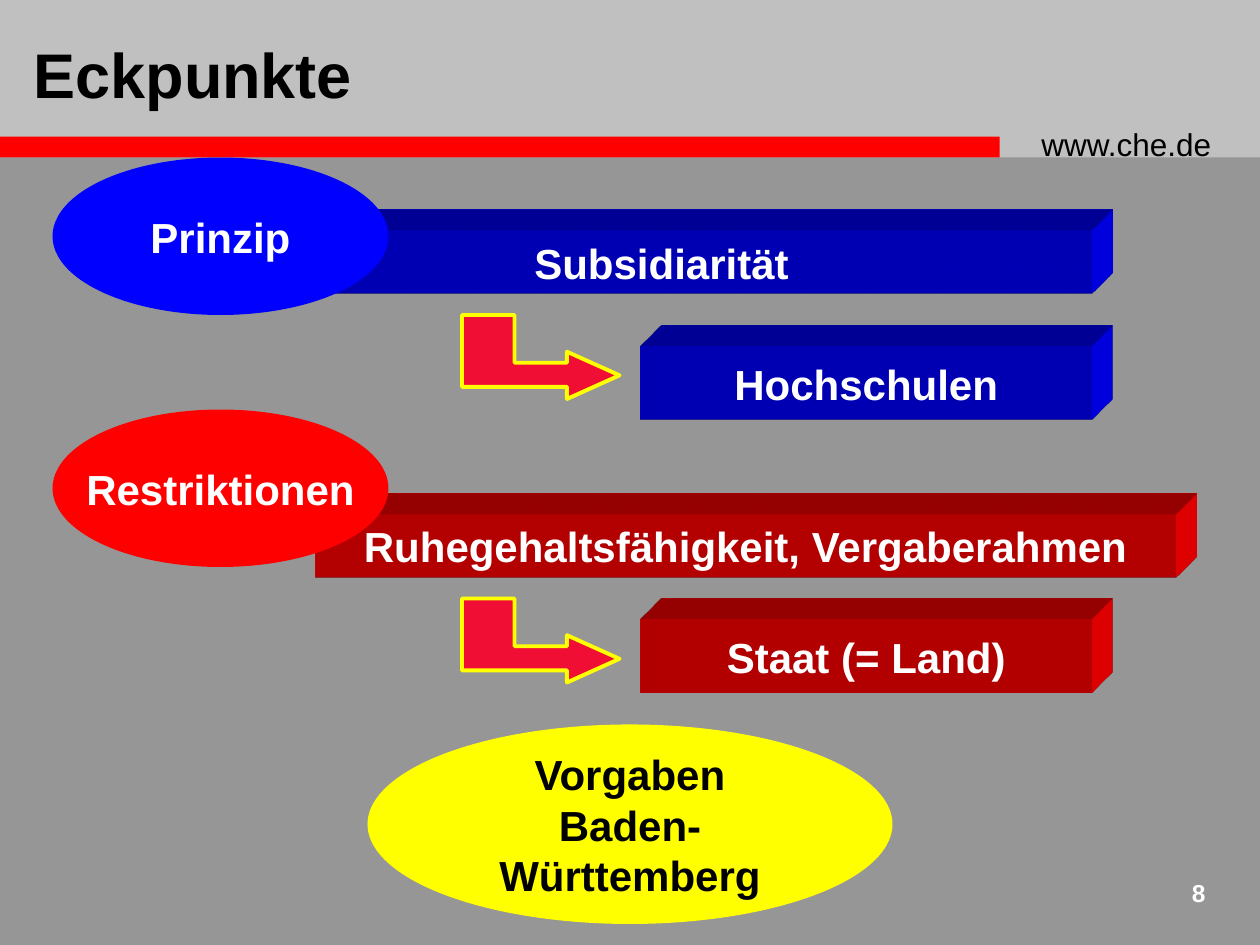
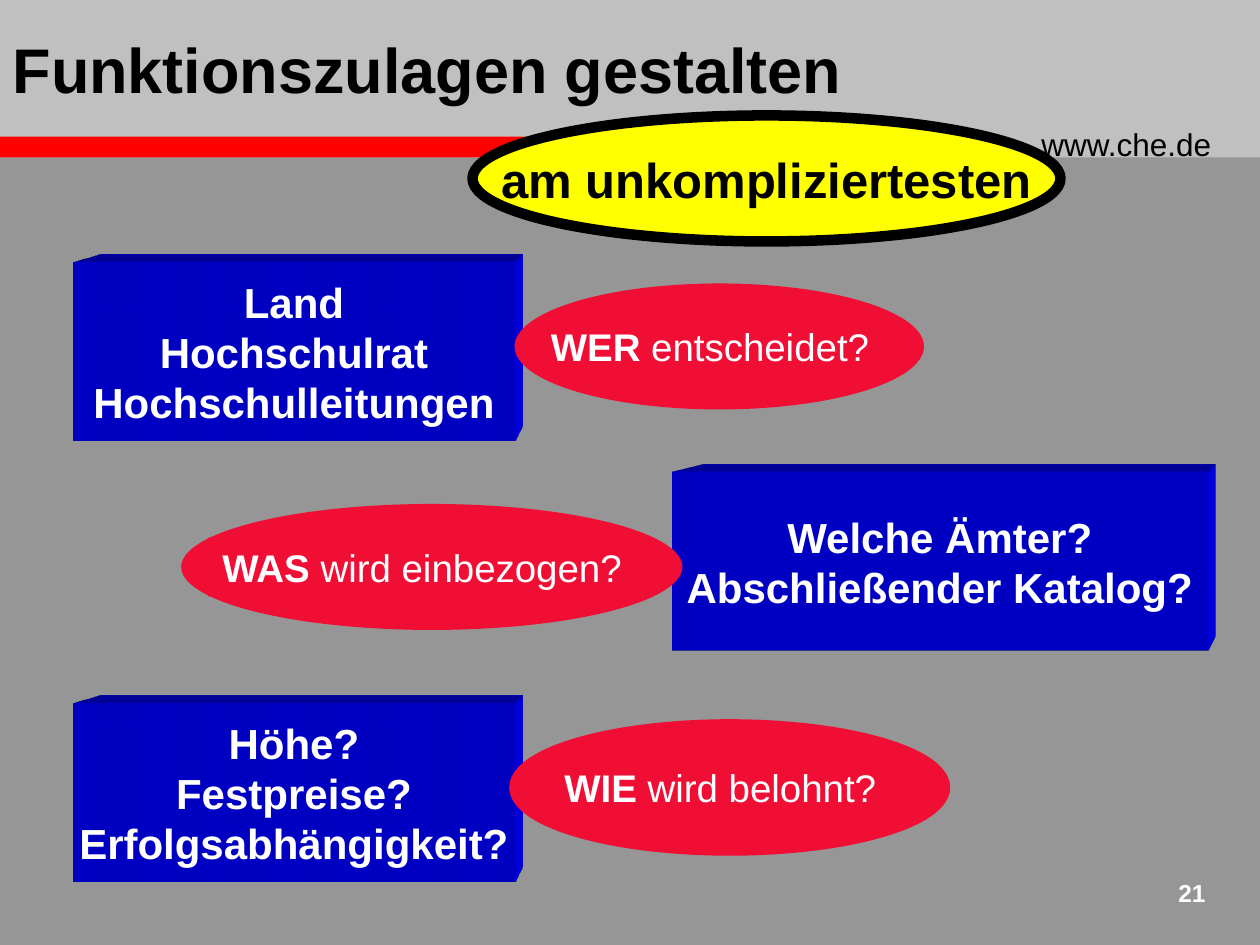
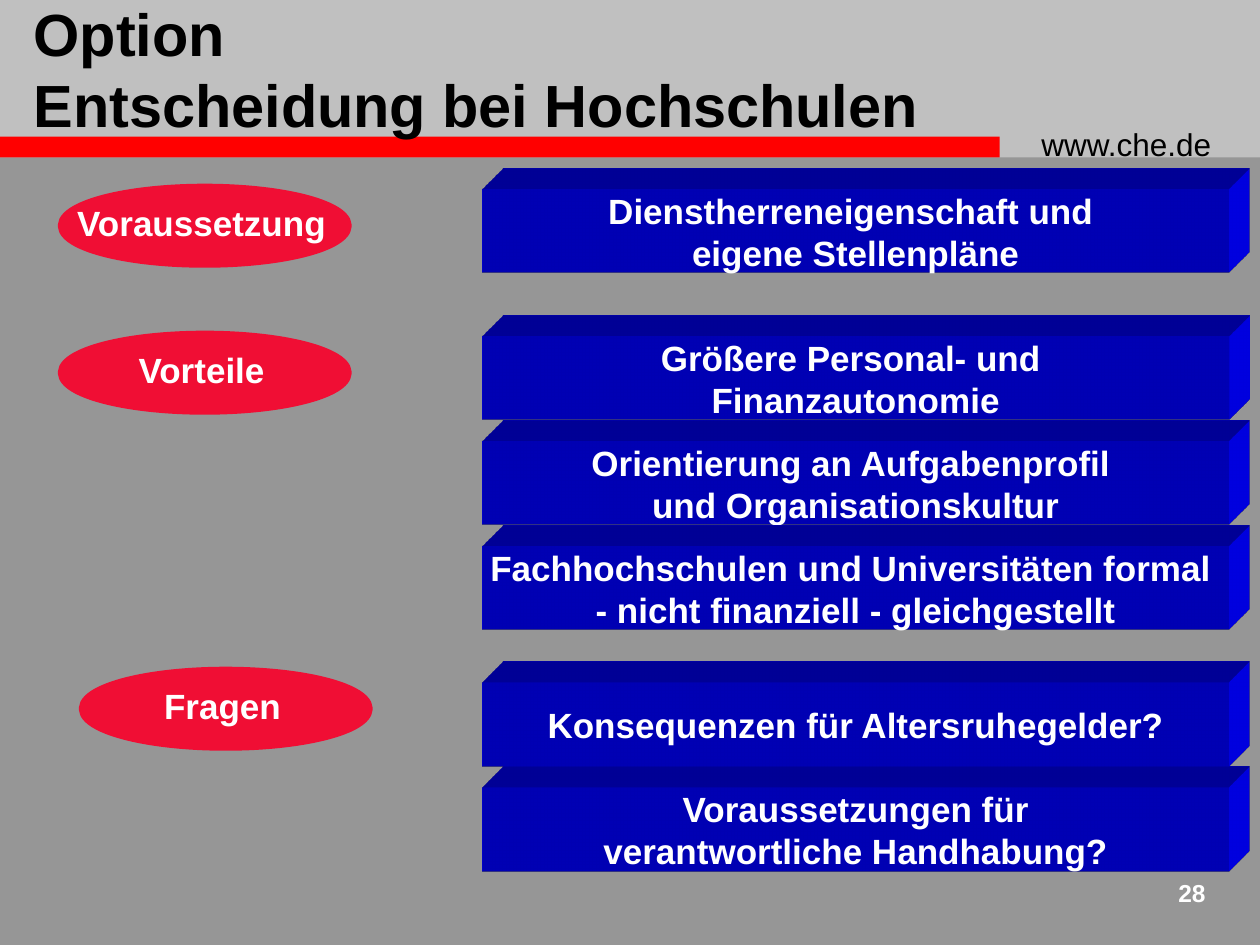
"""Build three slides on allowances, laid out on a grid of 120 columns by 90 rows."""
from dataclasses import dataclass
from typing import Any

from lxml import etree
from pptx import Presentation
from pptx.dml.color import RGBColor
from pptx.enum.shapes import MSO_SHAPE
from pptx.enum.text import MSO_ANCHOR, MSO_AUTO_SIZE, PP_ALIGN
from pptx.util import Inches, Pt

RECT, OVAL = MSO_SHAPE.RECTANGLE, MSO_SHAPE.OVAL
MIDDLE, TOP = MSO_ANCHOR.MIDDLE, MSO_ANCHOR.TOP
LEFT, CENTER, RIGHT = PP_ALIGN.LEFT, PP_ALIGN.CENTER, PP_ALIGN.RIGHT
NO_FIT = MSO_AUTO_SIZE.NONE

WIDTH, HEIGHT = Inches(10), Inches(7.5)
COLUMNS, ROWS = 120, 90
FONT = "Arial"
COLORS = {
    "ground": "969696", "header": "C0C0C0", "red": "FF0000", "blue": "0000FF",
    "crimson": "F00E34", "yellow": "FFFF00", "white": "FFFFFF", "black": "000000",
}
DRAWING = "http://schemas.openxmlformats.org/drawingml/2006/main"
OBLIQUE, PERSPECTIVE = "legacyObliqueTopRight", "legacyPerspectiveTopRight"
ARROW = ((15, 5.75), (10, 3.5), (10, 4.55), (5, 4.55), (5, 0), (0, 0),
         (0, 6.85), (10, 6.85), (10, 8))
Cell = tuple[float, float, float, float]


@dataclass(frozen=True)
class Block:
    """A solid bar with a front face and centred lines."""
    cell: Cell
    lines: tuple[str, ...]
    fill: str = "blue"
    size: int = 24
    camera: str = OBLIQUE


@dataclass(frozen=True)
class Bubble:
    """An ellipse with centred lines."""
    cell: Cell
    lines: tuple[str, ...]
    fill: str
    color: str = "white"
    size: int = 24
    outline: str | None = None


@dataclass(frozen=True)
class Tag:
    """An ellipse grouped with its caption."""
    cell: Cell
    caption: Cell
    bold: str
    plain: str = ""
    size: int = 22
    outline: str | None = "crimson"
    back: str | None = "crimson"


@dataclass(frozen=True)
class Arrow:
    """A bent arrow placed by its upper left corner."""
    left: float
    top: float


@dataclass(frozen=True)
class Page:
    """The content of one slide, from back to front."""
    number: str
    title: tuple[str, ...]
    title_cell: Cell
    title_size: int
    items: tuple[Block | Bubble | Tag | Arrow, ...]


def staff_block(row: float, *lines: str) -> Block:
    """Return a bar in the right-hand column of the decision slide."""
    return Block((46, row, 71, 8), lines, size=20)


def staff_tag(column: float, row: float, text: str) -> Tag:
    """Return a tag in the left-hand column of the decision slide."""
    return Tag((column, row, 27, 7), (column, row + 0.6, 26.4, 5.2), text, size=20, back=None)


PAGES = (
    Page("8", ("Eckpunkte",), (2, 2, 84, 10), 36, (
        Block((22, 22, 82, 6), ("Subsidiarität",)),
        Arrow(44, 30),
        Block((61, 33, 43, 7), ("Hochschulen",)),
        Bubble((5, 15, 32, 15), ("Prinzip",), "blue"),
        Block((30, 49, 82, 6), ("Ruhegehaltsfähigkeit, Vergaberahmen",), "red"),
        Arrow(44, 57),
        Block((61, 59, 43, 7), ("Staat (= Land)",), "red"),
        Bubble((5, 39, 32, 15), ("Restriktionen",), "red"),
        Bubble((35, 69, 50, 19), ("Vorgaben", "Baden-", "Württemberg"), "yellow", "black"),
    )),
    Page("21", ("Funktionszulagen gestalten",), (0, 0, 97, 13), 36, (
        Block((64, 45, 51, 17), ("Welche Ämter?", "Abschließender Katalog?"), camera=PERSPECTIVE),
        Block((7, 25, 42, 17), ("Land", "Hochschulrat", "Hochschulleitungen"), camera=PERSPECTIVE),
        Tag((49, 27, 39, 12), (51.25, 30.2, 32.75, 5.6), "WER", " entscheidet?", outline=None),
        Tag((17.25, 48, 47.75, 12), (19.8, 51.2, 40.8, 5.6), "WAS", " wird einbezogen?",
            outline=None),
        Block((7, 67, 42, 17), ("Höhe?", "Festpreise?", "Erfolgsabhängigkeit?"),
              camera=PERSPECTIVE),
        Tag((49, 69, 41, 12), (52.5, 72.2, 32.2, 5.6), "WIE ", "wird belohnt?"),
        Bubble((45, 11, 56, 12), ("am unkompliziertesten",), "yellow", "black", 28, "black"),
    )),
    Page("28", ("Option", "Entscheidung bei Hochschulen"), (2, 0, 97, 13), 34, (
        staff_block(18, "Dienstherreneigenschaft und ", "eigene Stellenpläne"),
        staff_block(32, "Größere Personal- und ", "Finanzautonomie"),
        staff_block(42, "Orientierung an Aufgabenprofil ", "und Organisationskultur"),
        staff_block(52, "Fachhochschulen und Universitäten formal ",
                    "- nicht finanziell - gleichgestellt"),
        staff_block(65, "Konsequenzen für Altersruhegelder?"),
        staff_block(75, "Voraussetzungen für", "verantwortliche Handhabung?"),
        staff_tag(6, 18, "Voraussetzung"),
        staff_tag(6, 32, "Vorteile"),
        staff_tag(8, 64, "Fragen"),
    )),
)


def rgb(name: str) -> RGBColor:
    """Return a named colour."""
    return RGBColor.from_string(COLORS[name])


def assign(target: Any, values: dict[str, Any]) -> None:
    """Set attributes from a dict of format values."""
    for name, value in values.items():
        setattr(target, name, value)


def grid(cell: Cell) -> tuple[int, ...]:
    """Turn columns and rows into lengths."""
    steps = (WIDTH / COLUMNS, HEIGHT / ROWS) * 2
    return tuple(round(n * step) for n, step in zip(cell, steps))


def add_run(p: Any, text: str, size: int, color: str, bold: bool = True) -> None:
    """Add a formatted run to a paragraph."""
    r = p.add_run()
    r.text = text
    assign(r.font, {"name": FONT, "size": Pt(size), "bold": bold})
    r.font.color.rgb = rgb(color)


def write(tf: Any, lines: tuple[str, ...], size: int, color: str, bold: bool = True,
          align: Any = CENTER, anchor: Any = MIDDLE, wrap: bool = False) -> None:
    """Fill a text frame with one paragraph for each line."""
    assign(tf, {"word_wrap": wrap, "vertical_anchor": anchor})
    for i, line in enumerate(lines):
        p = tf.add_paragraph() if i else tf.paragraphs[0]
        p.alignment = align
        add_run(p, line, size, color, bold)


def paint(sp: Any, fill: str, outline: str | None = None, weight: float = 6) -> None:
    """Give a shape its fill and line and no shadow."""
    sp.shadow.inherit = False
    sp.fill.solid()
    sp.fill.fore_color.rgb = rgb(fill)
    if outline:
        sp.line.color.rgb = rgb(outline)
        sp.line.width = Pt(weight)
    else:
        sp.line.fill.background()


def extrude(sp: Any, fill: str, camera: str) -> None:
    """Give a shape depth towards the upper right."""
    parts = (
        f'<a:scene3d xmlns:a="{DRAWING}"><a:camera prst="{camera}"/>'
        '<a:lightRig rig="legacyFlat3" dir="b"/></a:scene3d>',
        f'<a:sp3d xmlns:a="{DRAWING}" extrusionH="430200" prstMaterial="legacyMatte">'
        '<a:bevelT w="13500" h="13500" prst="angle"/><a:bevelB w="13500" h="13500" prst="angle"/>'
        f'<a:extrusionClr><a:srgbClr val="{COLORS[fill]}"/></a:extrusionClr></a:sp3d>',
    )
    for part in parts:
        sp.element.spPr.append(etree.fromstring(part))


def add_block(shapes: Any, block: Block) -> None:
    """Draw a solid bar."""
    sp = shapes.add_shape(RECT, *grid(block.cell))
    paint(sp, block.fill)
    extrude(sp, block.fill, block.camera)
    write(sp.text_frame, block.lines, block.size, "white")


def add_bubble(shapes: Any, bubble: Bubble) -> None:
    """Draw an ellipse with text."""
    sp = shapes.add_shape(OVAL, *grid(bubble.cell))
    paint(sp, bubble.fill, bubble.outline)
    write(sp.text_frame, bubble.lines, bubble.size, bubble.color)


def add_tag(shapes: Any, tag: Tag) -> None:
    """Draw an ellipse and its caption as a group."""
    group = shapes.add_group_shape()
    paint(group.shapes.add_shape(OVAL, *grid(tag.cell)), "crimson", tag.outline)
    sp = group.shapes.add_textbox(*grid(tag.caption))
    if tag.back:
        sp.fill.solid()
        sp.fill.fore_color.rgb = rgb(tag.back)
    write(sp.text_frame, (tag.bold,), tag.size, "white")
    if tag.plain:
        add_run(sp.text_frame.paragraphs[0], tag.plain, tag.size, "white", False)


def add_arrow(shapes: Any, arrow: Arrow) -> None:
    """Draw a bent arrow."""
    points = [grid((arrow.left + x, arrow.top + y, 0, 0))[:2] for x, y in ARROW]
    builder = shapes.build_freeform(*points[0])
    builder.add_line_segments(points[1:], close=True)
    paint(builder.convert_to_shape(), "crimson", "yellow", 2.25)


DRAW = {Block: add_block, Bubble: add_bubble, Tag: add_tag, Arrow: add_arrow}


def dress_master(master: Any, shapes: Any) -> None:
    """Put the background, bands and web address on the slide master."""
    fill = master.background.fill
    fill.solid()
    fill.fore_color.rgb = rgb("ground")
    header = shapes.add_shape(RECT, *grid((0, 0, COLUMNS, 15)))
    band = shapes.add_shape(RECT, *grid((0, 13, 95.2, 2)))
    address = shapes.add_textbox(*grid((98, 11.3, 21, 4.8)))
    paint(header, "header")
    paint(band, "red")
    write(address.text_frame, ("www.che.de",), 18, "black", False, LEFT, TOP, True)
    for i, sp in enumerate((header, band, address)):
        sp.element.nvSpPr.cNvPr.set("id", str(100 + i))
        master.shapes.element.insert(2 + i, sp.element)


def add_title(sp: Any, page: Page) -> None:
    """Place and write the title."""
    assign(sp, dict(zip(("left", "top", "width", "height"), grid(page.title_cell))))
    tf = sp.text_frame
    tf.auto_size = NO_FIT
    write(tf, page.title[:1], page.title_size, "black", align=LEFT, wrap=True)
    p = tf.paragraphs[0]
    for line in page.title[1:]:
        p.add_line_break()
        add_run(p, line, page.title_size, "black")


def main() -> None:
    """Build and save the presentation."""
    prs = Presentation()
    assign(prs, {"slide_width": WIDTH, "slide_height": HEIGHT})
    for page in PAGES:
        s = prs.slides.add_slide(prs.slide_layouts[5])
        if page is PAGES[0]:
            dress_master(prs.slide_master, s.shapes)
        add_title(s.shapes.title, page)
        number = s.shapes.add_textbox(*grid((109, 83, 7, 5)))
        write(number.text_frame, (page.number,), 14, "white", True, RIGHT, TOP, True)
        for item in page.items:
            DRAW[type(item)](s.shapes, item)
    prs.save("out.pptx")


if __name__ == "__main__":
    main()
